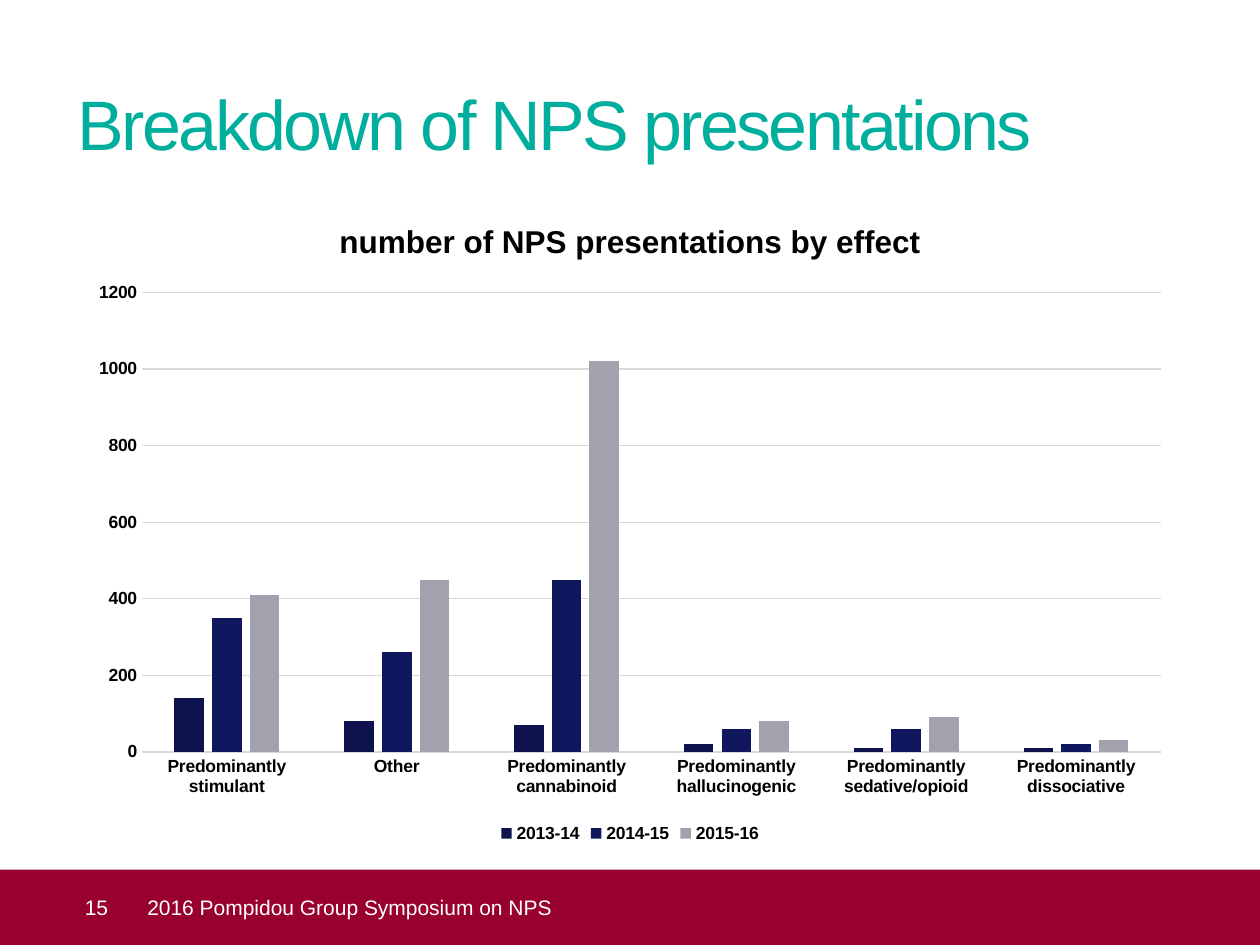
import pptx
import pptx.chart.data
import pptx.dml.color
import pptx.enum.chart
import pptx.enum.shapes
import pptx.enum.text
import pptx.util
from pptx.util import Cm, Pt

COLOURS = {
    "title": "00AE9E",
    "footer": "98002E",
    "footer text": "FFFFFF",
    "chart text": "000000",
    "grid": "D9D9D9",
    "2013-14": "0E134E",
    "2014-15": "11175E",
    "2015-16": "A2A2AE",
}
EFFECTS = [
    "Predominantly stimulant",
    "Other",
    "Predominantly cannabinoid",
    "Predominantly hallucinogenic",
    "Predominantly sedative/opioid",
    "Predominantly dissociative",
]
PRESENTATIONS_BY_YEAR = {
    "2013-14": [140, 80, 70, 20, 10, 10],
    "2014-15": [350, 260, 450, 60, 60, 20],
    "2015-16": [410, 450, 1020, 80, 90, 30],
}
FOOTER_TOP, FOOTER_HEIGHT = Cm(17.53), Cm(1.52)


def rgb(name):
    return pptx.dml.color.RGBColor.from_string(COLOURS[name])


class SlideBuilder:
    def __init__(self, slide, font_name="Arial"):
        self.slide = slide
        self.font_name = font_name

    def style_font(self, font, size, colour, bold=False):
        font.name = self.font_name
        font.size = Pt(size)
        font.bold = bold
        font.color.rgb = rgb(colour)

    def set_line(self, shape, text, size, colour, anchor, indent=0, spacing=0):
        """Fill a shape with one line; indent is in cm, spacing in points."""
        frame = shape.text_frame
        frame.word_wrap = True
        frame.vertical_anchor = anchor
        frame.margin_left = frame.margin_top = 0
        frame.margin_right = frame.margin_bottom = 0
        frame.text = text
        line = frame.paragraphs[0]
        line.alignment = pptx.enum.text.PP_ALIGN.LEFT
        properties = line._p.get_or_add_pPr()
        properties.set("marL", str(Cm(indent)))
        properties.set("indent", "0")
        run = line.runs[0]
        self.style_font(run.font, size, colour)
        if spacing:
            run._r.get_or_add_rPr().set("spc", str(int(spacing * 100)))

    def text(self, left, top, width, height, text, *style, **spacing):
        box = self.slide.shapes.add_textbox(left, top, width, height)
        self.set_line(box, text, *style, **spacing)

    def band(self, left, top, width, height, fill, text, *style, **spacing):
        band = self.slide.shapes.add_shape(
            pptx.enum.shapes.MSO_SHAPE.RECTANGLE, left, top, width, height)
        band.shadow.inherit = False
        band.fill.solid()
        band.fill.fore_color.rgb = rgb(fill)
        band.line.fill.background()
        self.set_line(band, text, *style, **spacing)

    def grid_line(self, line):
        line.color.rgb = rgb("grid")
        line.width = Pt(0.75)

    def column_chart(self, left, top, width, height, heading, categories, series):
        chart_data = pptx.chart.data.CategoryChartData()
        chart_data.categories = categories
        for name, values in series.items():
            chart_data.add_series(name, values)
        chart = self.slide.shapes.add_chart(
            pptx.enum.chart.XL_CHART_TYPE.COLUMN_CLUSTERED,
            left, top, width, height, chart_data).chart
        self.style_font(chart.font, 10, "chart text", bold=True)

        chart.has_title = True
        chart.chart_title.include_in_layout = False
        title = chart.chart_title.text_frame
        title.text = heading
        self.style_font(title.paragraphs[0].runs[0].font, 18, "chart text", bold=True)

        chart.has_legend = True
        chart.legend.position = pptx.enum.chart.XL_LEGEND_POSITION.BOTTOM
        chart.legend.include_in_layout = False

        for axis in (chart.category_axis, chart.value_axis):
            axis.major_tick_mark = pptx.enum.chart.XL_TICK_MARK.NONE
            axis.minor_tick_mark = pptx.enum.chart.XL_TICK_MARK.NONE
        self.grid_line(chart.category_axis.format.line)
        chart.value_axis.format.line.fill.background()
        self.grid_line(chart.value_axis.major_gridlines.format.line)
        chart.value_axis.minimum_scale = 0
        chart.value_axis.maximum_scale = 1200
        chart.value_axis.major_unit = 200

        plot = chart.plots[0]
        plot.gap_width = 219
        plot.overlap = -27
        plot.vary_by_categories = False
        for columns in plot.series:
            columns.format.fill.solid()
            columns.format.fill.fore_color.rgb = rgb(columns.name)
            columns.invert_if_negative = False


def main():
    presentation = pptx.Presentation()
    presentation.slide_width = Cm(25.4)
    presentation.slide_height = Cm(19.05)
    builder = SlideBuilder(presentation.slides.add_slide(presentation.slide_layouts[6]))
    anchors = pptx.enum.text.MSO_ANCHOR

    builder.text(Cm(1.57), Cm(1.52), Cm(22.3), Cm(1.8),
                 "Breakdown of NPS presentations",
                 40, "title", anchors.BOTTOM, spacing=-1.5)
    builder.band(0, FOOTER_TOP, presentation.slide_width, FOOTER_HEIGHT, "footer",
                 "15", 12, "footer text", anchors.MIDDLE, indent=1.71)
    builder.text(Cm(2.49), FOOTER_TOP, Cm(22.4), FOOTER_HEIGHT,
                 "2016 Pompidou Group Symposium on NPS",
                 12, "footer text", anchors.MIDDLE, indent=0.48)
    builder.column_chart(Cm(1.55), Cm(3.94), Cm(22.3), Cm(13.16),
                         "number of NPS presentations by effect",
                         EFFECTS, PRESENTATIONS_BY_YEAR)
    presentation.save("out.pptx")


if __name__ == "__main__":
    main()
